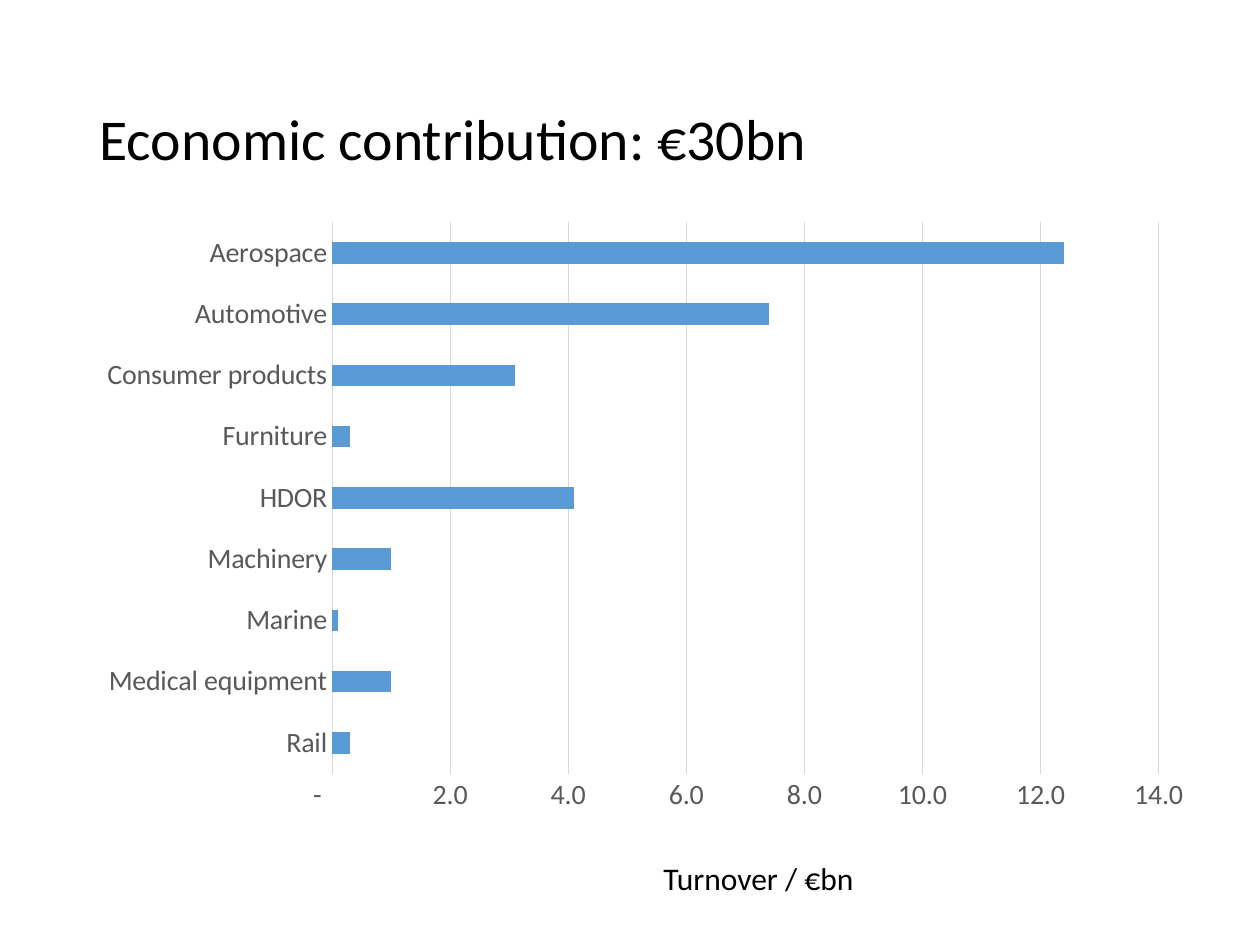
import pptx
import pptx.chart.data
import pptx.dml.color
import pptx.enum.chart
import pptx.enum.text
import pptx.oxml
import pptx.oxml.ns
import pptx.util
from pptx.util import Inches

BLACK = pptx.dml.color.RGBColor(0x00, 0x00, 0x00)
GREY = pptx.dml.color.RGBColor(0x59, 0x59, 0x59)
LIGHT_GREY = pptx.dml.color.RGBColor(0xD9, 0xD9, 0xD9)
BLUE = pptx.dml.color.RGBColor(0x5B, 0x9B, 0xD5)

TURNOVER = {
    "Rail": 0.3,
    "Medical equipment": 1,
    "Marine": 0.1,
    "Machinery": 1,
    "HDOR": 4.1,
    "Furniture": 0.3,
    "Consumer products": 3.1,
    "Automotive": 7.4,
    "Aerospace": 12.4,
}
NUMBER_FORMAT = '_-* #,##0.0_-;\\-* #,##0.0_-;_-* "-"??_-;'
PLOT_AREA = {"x": 0.26, "y": 0.03, "w": 0.7, "h": 0.797}


def set_values(target, values):
    for name, value in values.items():
        setattr(target, name, value)


def format_font(font, size, color):
    set_values(font, {"name": "Calibri", "size": pptx.util.Pt(size), "bold": False})
    font.color.rgb = color


def place(shape, left, top, width, height):
    set_values(shape, {"left": Inches(left), "top": Inches(top),
                       "width": Inches(width), "height": Inches(height)})


def write_line(frame, text, size, para_format):
    para = frame.paragraphs[0]
    set_values(para, para_format)
    span = para.add_run()
    span.text = text
    format_font(span.font, size, BLACK)


def add_title(page, text):
    title = page.shapes.title
    place(title, 0.69, 0.4, 8.62, 1.45)
    title.text_frame.vertical_anchor = pptx.enum.text.MSO_ANCHOR.MIDDLE
    write_line(title.text_frame, text, 33,
               {"alignment": pptx.enum.text.PP_ALIGN.LEFT, "line_spacing": 0.9})


def add_axis_caption(page, text):
    box = page.shapes.add_textbox(Inches(4.64), Inches(6.77), Inches(2.76), Inches(0.4))
    set_values(box.text_frame, {"word_wrap": True,
                                "auto_size": pptx.enum.text.MSO_AUTO_SIZE.SHAPE_TO_FIT_TEXT})
    write_line(box.text_frame, text, 18, {"alignment": pptx.enum.text.PP_ALIGN.CENTER})


def format_line(line):
    line.color.rgb = LIGHT_GREY
    line.width = pptx.util.Pt(0.75)


def fix_plot_area(chart):
    """Fix the inner plot area at fractions of the chart's size."""
    plot_area = chart.plots[0]._element.getparent()
    for layout in plot_area.findall(pptx.oxml.ns.qn("c:layout")):
        plot_area.remove(layout)
    modes = "".join(f'<c:{side}Mode val="edge"/>' for side in "xy")
    sizes = "".join(f'<c:{side} val="{value}"/>' for side, value in PLOT_AREA.items())
    plot_area.insert(0, pptx.oxml.parse_xml(
        f'<c:layout {pptx.oxml.ns.nsdecls("c")}><c:manualLayout>'
        f'<c:layoutTarget val="inner"/>{modes}{sizes}</c:manualLayout></c:layout>'))


def format_axes(chart):
    no_tick = pptx.enum.chart.XL_TICK_MARK.NONE
    for axis in (chart.category_axis, chart.value_axis):
        set_values(axis, {"major_tick_mark": no_tick, "minor_tick_mark": no_tick})
        format_font(axis.tick_labels.font, 16, GREY)
    chart.category_axis.has_major_gridlines = False
    format_line(chart.category_axis.format.line)

    values = chart.value_axis
    set_values(values, {"minimum_scale": 0, "maximum_scale": 14, "major_unit": 2,
                        "has_major_gridlines": True})
    set_values(values.tick_labels, {"number_format": NUMBER_FORMAT,
                                    "number_format_is_linked": False})
    values.format.line.fill.background()
    format_line(values.major_gridlines.format.line)


def add_turnover_chart(page):
    data = pptx.chart.data.CategoryChartData()
    data.categories = list(TURNOVER)
    data.add_series("Series 1", list(TURNOVER.values()))
    chart = page.shapes.add_chart(
        pptx.enum.chart.XL_CHART_TYPE.BAR_CLUSTERED,
        Inches(0.2), Inches(1.6), Inches(9.37), Inches(5.49), data).chart
    set_values(chart, {"has_legend": False, "has_title": False})
    format_font(chart.font, 16, BLACK)

    plot = chart.plots[0]
    set_values(plot, {"gap_width": 182, "vary_by_categories": False})
    fill = plot.series[0].format.fill
    fill.solid()
    fill.fore_color.rgb = BLUE
    format_axes(chart)
    fix_plot_area(chart)


def main():
    deck = pptx.Presentation()
    set_values(deck, {"slide_width": Inches(10), "slide_height": Inches(7.5)})
    page = deck.slides.add_slide(deck.slide_layouts.get_by_name("Title Only"))
    add_title(page, "Economic contribution: €30bn")
    add_turnover_chart(page)
    add_axis_caption(page, "Turnover / €bn")
    deck.save("out.pptx")


if __name__ == "__main__":
    main()
